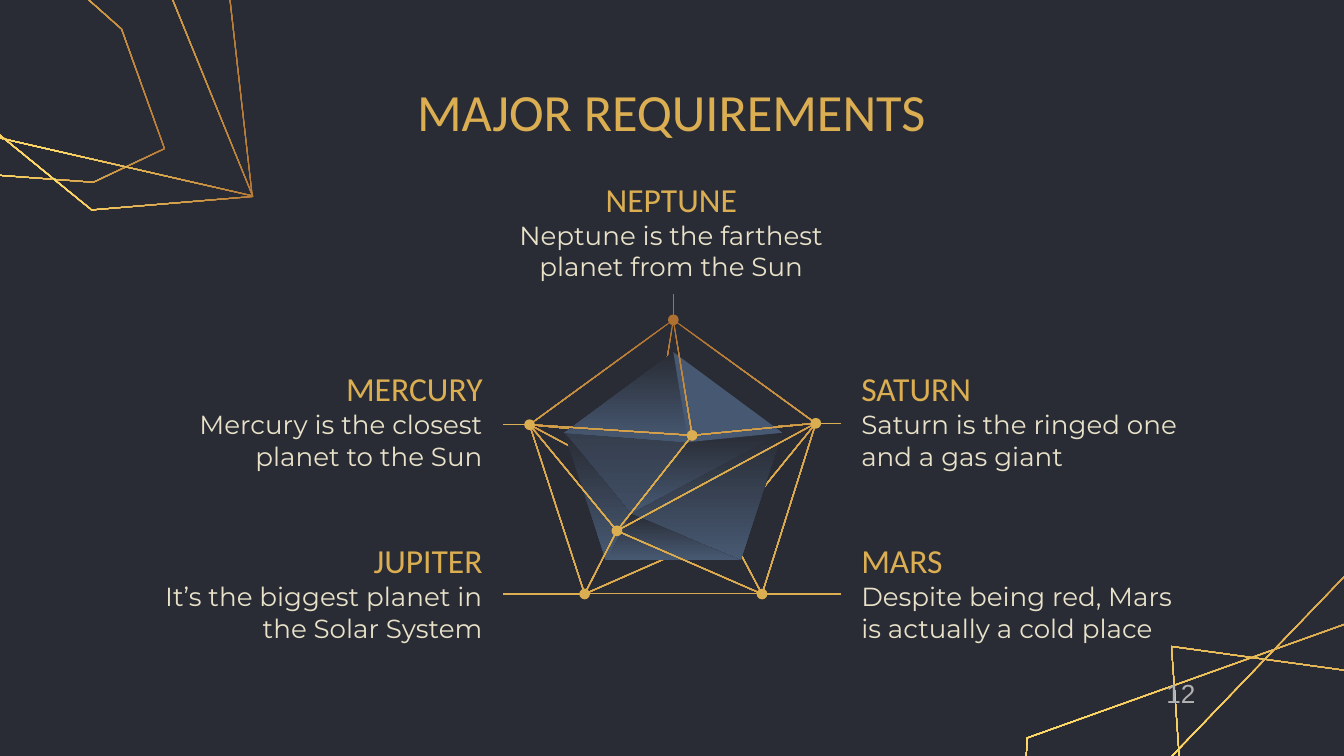
"""Build the planet requirements slide around a faceted pentagon."""
from copy import deepcopy
from dataclasses import dataclass
from itertools import pairwise
from math import cos, hypot, radians, sin

from pptx import Presentation
from pptx.dml.color import RGBColor as RGB
from pptx.enum.shapes import MSO_CONNECTOR as CONN, MSO_SHAPE as SHAPE
from pptx.enum.text import MSO_ANCHOR as ANCHOR, PP_ALIGN as ALIGN
from pptx.oxml.ns import qn
from pptx.oxml.xmlchemy import OxmlElement
from pptx.util import Inches, Pt


@dataclass(frozen=True)
class Theme:
    bg: str = "292C35"
    gold: str = "DCAE52"
    bronze: str = "AF7132"
    bright: str = "FFDD6B"
    slate: str = "475972"
    cream: str = "E9E2C9"
    grey: str = "B2B2B2"
    head: str = "Calibri"
    body: str = "Montserrat"
    plain: str = "Arial"
    title_size: int = 28
    head_size: int = 18
    body_size: int = 14
    strand: float = Pt(0.5).inches
    dot: float = 0.08


T = Theme()
CORNERS = [
    (25.2, (10.24, 6.52), [(8.97, 8.35), (8.72, 4.81), (13.08, 5.41), (12.29, 7.09)]),
    (85.2, (-0.17, 0.21), [(-1.54, -0.44), (-0.45, -0.97), (0.89, 0.22),
                           (1.21, 1.11), (0.68, 1.36), (-1.08, 1.23)]),
    (85.2, (0.35, 0.4), [(-1.11, 0.1), (-0.71, -0.7), (1.71, -0.04),
                         (1.88, 1.46), (-0.26, 0.97)]),
    (85.2, (0.34, 0.22), [(-1.11, 0.1), (0.8, -1.19), (1.88, 1.46), (0.68, 1.56)]),
    (23.8, (9.44, 5.99), [(7.56, 7.34), (7.64, 5.49), (10.21, 4.57),
                          (11.63, 4.79), (11.59, 5.69), (10.13, 7.94)]),
    (23.8, (9.85, 6.16), [(8.38, 7.9), (7.6, 6.79), (10.26, 4.02),
                          (12.38, 4.9), (10.17, 7.4)]),
]
NODES = {"top": (5.01, 2.38), "left": (3.94, 3.16), "right": (6.07, 3.15),
         "base_l": (4.35, 4.42), "base_r": (5.67, 4.42),
         "front_up": (5.15, 3.24), "front_low": (4.59, 3.95),
         "back_up": (4.87, 3.25), "back_low": (5.42, 3.95)}
RIM = "top right base_r base_l left top"
BACK_WEB = ["top back_up left back_low right back_up back_low base_l", "back_low base_r"]
FRONT_WEB = [RIM, "top front_up left front_low right front_up front_low base_l",
             "front_low base_r"]
GEM = {"apex": (5.01, 2.62), "left": (4.2, 3.22), "right": (5.82, 3.22),
       "base_l": (4.51, 4.17), "base_r": (5.51, 4.17),
       "up": (5.12, 3.29), "low": (4.69, 3.82)}
FACETS = ["apex left base_l base_r right", "right low base_r", "low base_l base_r",
          "left base_l low", "apex left up", "right up low"]
LEADERS = [((5.01, 2.19), (5.01, 2.39), T.bronze), ((4.38, 4.42), (3.74, 4.42), T.gold),
           ((6.26, 4.42), (5.64, 4.42), T.gold), ((3.94, 3.16), (3.74, 3.16), T.gold),
           ((6.26, 3.15), (6.07, 3.15), T.gold)]
PLANETS = [
    (3.69, 1.29, ALIGN.CENTER, "NEPTUNE", "Neptune is the farthest planet from the Sun"),
    (1.08, 2.7, ALIGN.RIGHT, "MERCURY", "Mercury is the closest planet to the Sun"),
    (6.31, 2.7, ALIGN.LEFT, "SATURN", "Saturn is the ringed one and a gas giant"),
    (1.08, 3.98, ALIGN.RIGHT, "JUPITER", "It’s the biggest planet in the Solar System"),
    (6.31, 3.98, ALIGN.LEFT, "MARS", "Despite being red, Mars is actually a cold place"),
]


def turn(point, center, degrees):
    a = radians(degrees)
    x, y = point[0] - center[0], point[1] - center[1]
    return center[0] + x * cos(a) - y * sin(a), center[1] + x * sin(a) + y * cos(a)


def strand(start, end):
    (x1, y1), (x2, y2) = start, end
    half = T.strand / 2 / hypot(x2 - x1, y2 - y1)
    dx, dy = (y1 - y2) * half, (x2 - x1) * half
    return [(x1 + dx, y1 + dy), (x2 + dx, y2 + dy), (x2 - dx, y2 - dy), (x1 - dx, y1 - dy)]


def trails(routes):
    return [strand(NODES[a], NODES[b]) for route in routes for a, b in pairwise(route.split())]


def corners(names):
    return [GEM[name] for name in names.split()]


class Deck:
    def __init__(self, theme):
        self.t = theme
        self.prs = Presentation()
        self.prs.slide_width, self.prs.slide_height = Inches(10), Inches(10 * 9 / 16)
        self.s = self.prs.slides.add_slide(self.prs.slide_layouts[6])
        self.paint(self.s.background.fill, [theme.bg])

    def paint(self, fill, colors):
        if len(colors) == 1:
            fill.solid()
            fill.fore_color.rgb = RGB.from_string(colors[0])
            return
        fill.gradient()
        fill.gradient_angle = 270

    def finish(self, sp, colors):
        sp.shadow.inherit = False
        sp.line.fill.background()
        self.paint(sp.fill, colors)
        if len(colors) > 1:
            stops = sp._element.spPr.find(qn("a:gradFill")).find(qn("a:gsLst"))
            for _ in colors[2:]:
                stops.append(deepcopy(stops[0]))
            for i, (stop, color) in enumerate(zip(sp.fill.gradient_stops, colors)):
                stop.position = i / (len(colors) - 1)
                stop.color.rgb = RGB.from_string(color)

    def outline(self, contours, colors, rotation=0):
        paths = [[(Inches(x), Inches(y)) for x, y in c] for c in contours]
        builder = self.s.shapes.build_freeform(*paths[0][0], scale=1.0)
        for i, path in enumerate(paths):
            if i:
                builder.move_to(*path[0])
            builder.add_line_segments(path[1:], close=True)
        sp = builder.convert_to_shape()
        sp.rotation = rotation
        self.finish(sp, colors)

    def dot(self, center, color):
        d = self.t.dot
        x, y = center
        sp = self.s.shapes.add_shape(SHAPE.OVAL, Inches(x - d / 2), Inches(y - d / 2),
                                     Inches(d), Inches(d))
        self.finish(sp, [color])

    def line(self, start, end, color):
        c = self.s.shapes.add_connector(CONN.STRAIGHT, *map(Inches, start + end))
        c.line.color.rgb = RGB.from_string(color)
        c.line.width = Pt(0.75)
        c._element.spPr.append(OxmlElement("a:effectLst"))

    def text(self, box, text, font, size, color, align=ALIGN.LEFT, anchor=ANCHOR.MIDDLE):
        tf = self.s.shapes.add_textbox(*map(Inches, box)).text_frame
        inset = Inches(0.1)
        frame = {"word_wrap": True, "vertical_anchor": anchor, "margin_left": inset,
                 "margin_right": inset, "margin_top": inset, "margin_bottom": inset}
        for key, value in frame.items():
            setattr(tf, key, value)
        p = tf.paragraphs[0]
        p.alignment = align
        r = p.add_run()
        r.text = text
        for key, value in {"name": font, "size": Pt(size)}.items():
            setattr(r.font, key, value)
        r.font.color.rgb = RGB.from_string(color)


def main():
    deck = Deck(T)
    for angle, center, points in CORNERS:
        flat = [turn(point, center, -angle) for point in points]
        deck.outline([strand(a, b) for a, b in pairwise(flat + flat[:1])],
                     [T.bronze, T.bright, T.gold], angle)
    deck.text((2.18, 0.59, 5.63, 0.47), "MAJOR REQUIREMENTS", T.head, T.title_size,
              T.gold, ALIGN.CENTER)
    for leader in LEADERS:
        deck.line(*leader)
    web = [T.bronze, T.gold, T.gold]
    deck.outline(trails(BACK_WEB), web)
    for facet in FACETS:
        deck.outline([corners(facet)], [T.bg, T.slate])
    deck.outline([corners("apex up right")], [T.slate])
    deck.outline(trails(FRONT_WEB), web)
    for name, center in NODES.items():
        if not name.startswith("back"):
            deck.dot(center, T.bronze if name == "top" else T.gold)
    for x, y, align, name, note in PLANETS:
        deck.text((x, y + 0.24, 2.61, 0.64), note, T.body, T.body_size, T.cream,
                  align, ANCHOR.TOP)
        deck.text((x, y, 2.61, 0.38), name, T.head, T.head_size, T.gold, align)
    deck.text((8.58, 4.99, 0.86, 0.34), "12", T.plain, T.body_size, T.grey)
    deck.prs.save("out.pptx")


if __name__ == "__main__":
    main()
